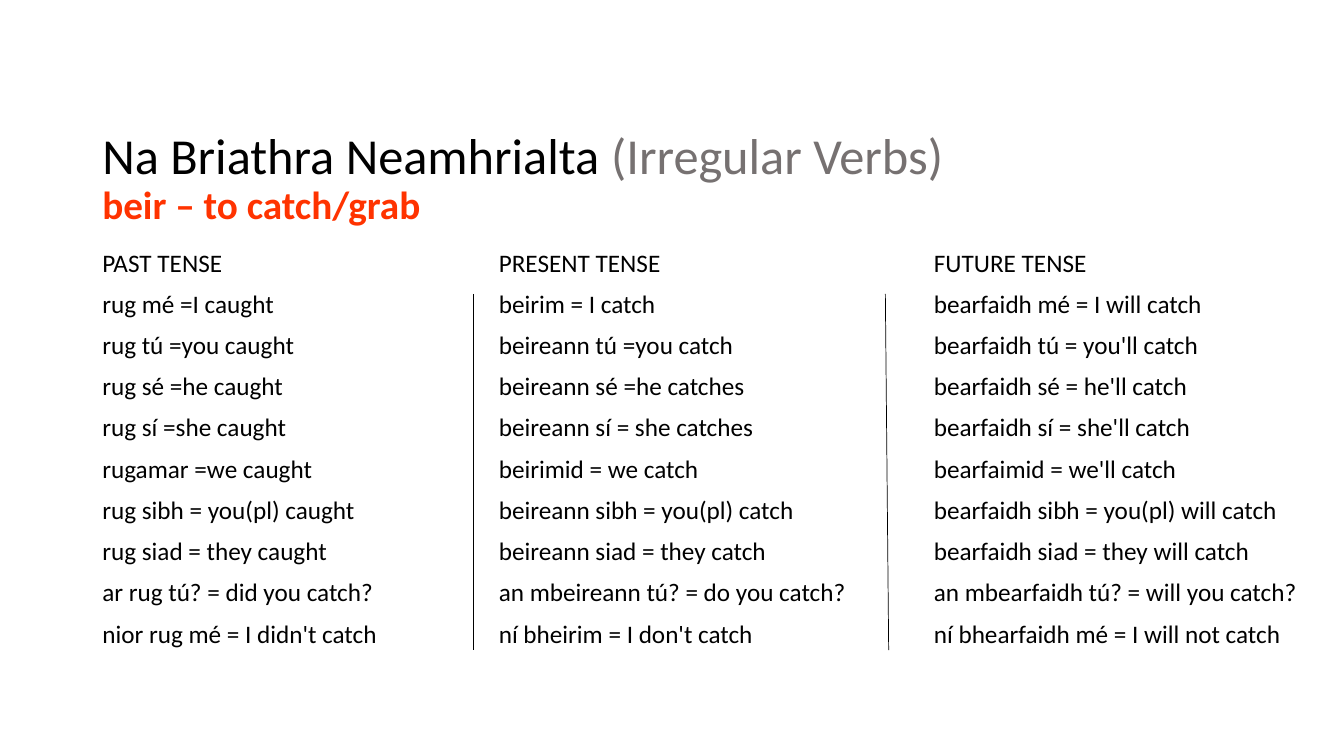
from lxml import etree
from pptx import Presentation
from pptx.dml.color import RGBColor
from pptx.enum.shapes import MSO_CONNECTOR
from pptx.enum.text import MSO_ANCHOR
from pptx.oxml.ns import qn
from pptx.util import Inches, Pt

STRAIGHT = MSO_CONNECTOR.STRAIGHT
TOP = MSO_ANCHOR.TOP

THEME = {
    "font": "Calibri",
    "ink": RGBColor(0x00, 0x00, 0x00),
    "gray": RGBColor(0x76, 0x71, 0x71),
    "red": RGBColor(0xFF, 0x33, 0x00),
    "title": Pt(36),
    "verb": Pt(28),
    "body": Pt(18),
    "rule": Pt(0.5),
}

deck = Presentation()
deck.slide_width = Inches(13.333)
deck.slide_height = Inches(7.5)
slide = deck.slides.add_slide(deck.slide_layouts[6])

# Grid of 160 columns by 90 rows
COL = deck.slide_width / 160
ROW = deck.slide_height / 90


def add_box(x, y, w, h):
    box = slide.shapes.add_textbox(
        round(x * COL), round(y * ROW), round(w * COL), round(h * ROW))
    frame = box.text_frame
    frame.word_wrap = True
    frame.vertical_anchor = TOP
    return frame


def add_run(para, text, size, color, bold=False):
    run = para.add_run()
    run.text = text
    font = run.font
    font.name = THEME["font"]
    font.size = THEME[size]
    font.color.rgb = THEME[color]
    font.bold = bold


# Title and verb
head = add_box(11, 15, 146.3, 13).paragraphs[0]
head.line_spacing = 0.9
add_run(head, "Na Briathra Neamhrialta ", "title", "ink")
add_run(head, "(Irregular Verbs)", "title", "gray")
head.add_line_break()
add_run(head, "beir – to catch/grab", "verb", "red", True)

# Tense columns: left, width, lines
tenses = [
    (11, 42.8, [
        "PAST TENSE",
        "rug mé =I caught",
        "rug tú =you caught",
        "rug sé =he caught",
        "rug sí =she caught",
        "rugamar =we caught",
        "rug sibh = you(pl) caught",
        "rug siad = they caught",
        "ar rug tú? = did you catch?",
        "nior rug mé = I didn't catch",
    ]),
    (58.2, 49.3, [
        "PRESENT TENSE",
        "beirim = I catch",
        "beireann tú =you catch",
        "beireann sé =he catches",
        "beireann sí = she catches",
        "beirimid = we catch",
        "beireann sibh = you(pl) catch",
        "beireann siad = they catch",
        "an mbeireann tú? = do you catch?",
        "ní bheirim = I don't catch",
    ]),
    (110, 47.2, [
        "FUTURE TENSE",
        "bearfaidh mé = I will catch",
        "bearfaidh tú = you'll catch",
        "bearfaidh sé = he'll catch",
        "bearfaidh sí = she'll catch",
        "bearfaimid = we'll catch",
        "bearfaidh sibh = you(pl) will catch",
        "bearfaidh siad = they will catch",
        "an mbearfaidh tú? = will you catch?",
        "ní bhearfaidh mé = I will not catch",
    ]),
]
for left, width, lines in tenses:
    frame = add_box(left, 29.2, width, 50)
    for i, line in enumerate(lines):
        para = frame.add_paragraph() if i else frame.paragraphs[0]
        para.line_spacing = 0.9
        para.space_before = Pt(10 if i else 0)
        add_run(para, line, "body", "ink")

# Rules between the columns
for start, end in [(56.4, 56.4), (105.4, 105.8)]:
    rule = slide.shapes.add_connector(
        STRAIGHT, round(start * COL), round(35 * ROW),
        round(end * COL), round(77.4 * ROW))
    rule.line.color.rgb = THEME["ink"]
    rule.line.width = THEME["rule"]
    etree.SubElement(rule._element.spPr, qn("a:effectLst"))

deck.save("out.pptx")
